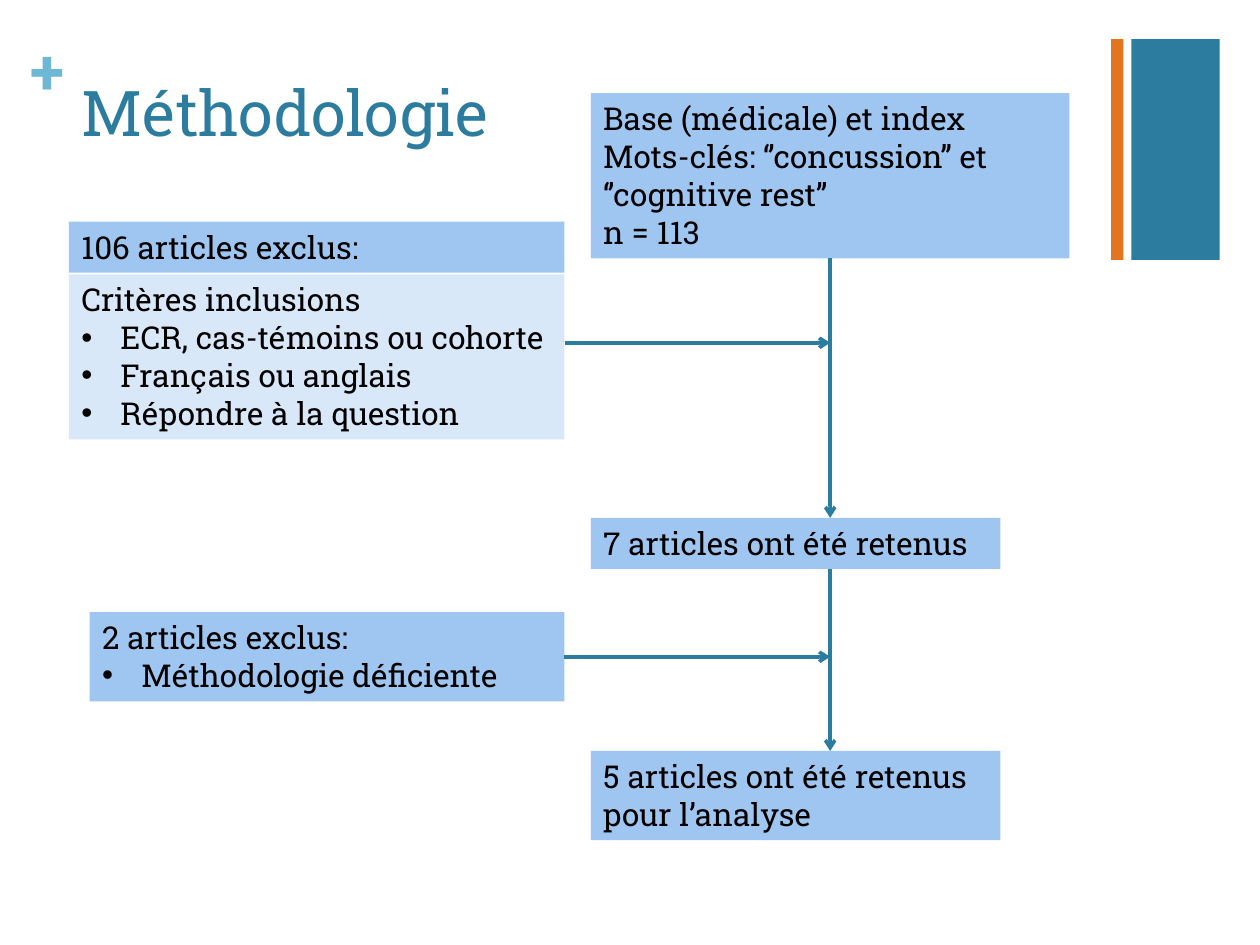
from dataclasses import dataclass
from typing import NamedTuple

from lxml import etree
from pptx import Presentation
from pptx.dml.color import RGBColor
from pptx.enum.shapes import MSO_CONNECTOR, MSO_SHAPE
from pptx.enum.text import MSO_ANCHOR, PP_ALIGN
from pptx.oxml.ns import qn
from pptx.util import Cm, Pt

BOTTOM, RIGHT = 2, 3


@dataclass(frozen=True)
class Theme:
    font: str = "Roboto Slab"
    title_size: int = 36
    body_size: int = 18
    line_width: int = 2
    teal: str = "2C7C9F"
    sky: str = "6FB7D7"
    orange: str = "E2751D"
    step: str = "9FC6F0"
    detail: str = "D9E8F9"
    ink: str = "000000"


class Box(NamedTuple):
    """A region in centimetres."""
    left: float
    top: float
    width: float
    height: float

    def inner(self, dx, dy, width, height):
        return Box(self.left + dx, self.top + dy, width, height)

    def lengths(self):
        return [Cm(value) for value in self]


THEME = Theme()


def rgb(code):
    return RGBColor.from_string(code)


def add_block(slide, box, color):
    block = slide.shapes.add_shape(MSO_SHAPE.RECTANGLE, *box.lengths())
    block.shadow.inherit = False
    block.fill.solid()
    block.fill.fore_color.rgb = rgb(color)
    block.line.fill.background()
    return block


def style_paragraph(paragraph, size, color, bold=False):
    paragraph.alignment = PP_ALIGN.LEFT
    font = paragraph.font
    font.name, font.size, font.bold = THEME.font, Pt(size), bold
    font.color.rgb = rgb(color)


def add_bullet(paragraph):
    properties = paragraph._p.get_or_add_pPr()
    indent = Cm(0.79)
    properties.set("marL", str(indent))
    properties.set("indent", str(-indent))
    bullet_font = etree.Element(qn("a:buFont"), typeface="Arial")
    bullet = etree.Element(qn("a:buChar"), char="•")
    properties.insert(0, bullet_font)
    properties.insert(1, bullet)


def add_step(slide, box, lines, bullets=(), color=THEME.step):
    """A filled box with plain lines followed by bulleted ones."""
    step = add_block(slide, box, color)
    frame = step.text_frame
    frame.word_wrap = True
    frame.vertical_anchor = MSO_ANCHOR.TOP
    for index, text in enumerate([*lines, *bullets]):
        paragraph = frame.add_paragraph() if index else frame.paragraphs[0]
        paragraph.text = text
        style_paragraph(paragraph, THEME.body_size, THEME.ink)
        if index >= len(lines):
            add_bullet(paragraph)
    return step


def add_arrow(slide, start, end, source=None, side=None):
    arrow = slide.shapes.add_connector(
        MSO_CONNECTOR.STRAIGHT, *[Cm(value) for value in (*start, *end)])
    if source is not None:
        arrow.begin_connect(source, side)
    arrow.line.color.rgb = rgb(THEME.teal)
    arrow.line.width = Pt(THEME.line_width)
    etree.SubElement(arrow.line._get_or_add_ln(), qn("a:tailEnd"), type="arrow")
    etree.SubElement(arrow._element.spPr, qn("a:effectLst"))


def add_heading(slide, box, text, color, margin, bold=False):
    heading = slide.shapes.add_textbox(*box.lengths())
    frame = heading.text_frame
    frame.word_wrap = True
    frame.margin_left = frame.margin_right = Cm(margin)
    frame.margin_top = frame.margin_bottom = Cm(margin / 2)
    frame.paragraphs[0].text = text
    style_paragraph(frame.paragraphs[0], THEME.title_size, color, bold)


def draw_header(slide, box):
    add_heading(slide, box.inner(0, 0, 0.74, 1.55), "+", THEME.sky, 0, bold=True)
    add_heading(slide, box.inner(0.79, 0.71, 20.98, 3.1), "Méthodologie",
                THEME.teal, 0.25)


def draw_side_bars(slide, box):
    narrow, wide = 0.25, 1.78
    add_block(slide, box.inner(0, 0, narrow, box.height), THEME.orange)
    add_block(slide, box.inner(box.width - wide, 0, wide, box.height), THEME.teal)


def draw_selection_flow(slide, box):
    """Retained articles run down the right, exclusions join from the left."""
    exclusion_width, retained_x, retained_width = 9.99, 10.52, 8.26
    search_width = box.width - retained_x
    trunk_x = box.left + retained_x + search_width / 2

    search = add_step(
        slide, box.inner(retained_x, 0, search_width, 3.33),
        ["Base (médicale) et index",
         "Mots-clés: ‘’concussion’’ et ‘’cognitive rest’’",
         "n = 113"])
    retained = box.inner(retained_x, 8.56, retained_width, 1.03)
    analysed = box.inner(retained_x, 13.26, retained_width, 1.8)
    add_step(slide, retained, ["7 articles ont été retenus"])
    add_step(slide, analysed, ["5 articles ont été retenus", "pour l’analyse"])

    add_step(slide, box.inner(0, 2.59, exclusion_width, 1.03),
             ["106 articles exclus:"])
    add_step(slide, box.inner(0, 3.65, exclusion_width, 3.33),
             ["Critères inclusions"],
             ["ECR, cas-témoins ou cohorte", "Français ou anglais",
              "Répondre à la question"], THEME.detail)
    indent = 0.42
    weak = box.inner(indent, 10.46, exclusion_width - indent, 1.8)
    weak_step = add_step(slide, weak, ["2 articles exclus:"],
                         ["Méthodologie déficiente"])

    exclusion_edge = box.left + exclusion_width
    criteria_y = box.top + 5.03
    weak_y = weak.top + weak.height / 2
    add_arrow(slide, (trunk_x, box.top + 3.33), (trunk_x, retained.top),
              search, BOTTOM)
    add_arrow(slide, (trunk_x, retained.top + retained.height),
              (trunk_x, analysed.top))
    add_arrow(slide, (exclusion_edge, criteria_y), (trunk_x, criteria_y))
    add_arrow(slide, (exclusion_edge, weak_y), (trunk_x, weak_y),
              weak_step, RIGHT)


def main():
    deck = Presentation()
    deck.slide_width, deck.slide_height = Cm(25.4), Cm(19.05)
    slide = deck.slides.add_slide(deck.slide_layouts[6])
    draw_side_bars(slide, Box(22.4, 0.79, 2.19, 4.45))
    draw_header(slide, Box(0.61, 0.64, 21.77, 3.81))
    draw_selection_flow(slide, Box(1.39, 1.88, 20.17, 15.06))
    deck.save("out.pptx")


if __name__ == "__main__":
    main()
